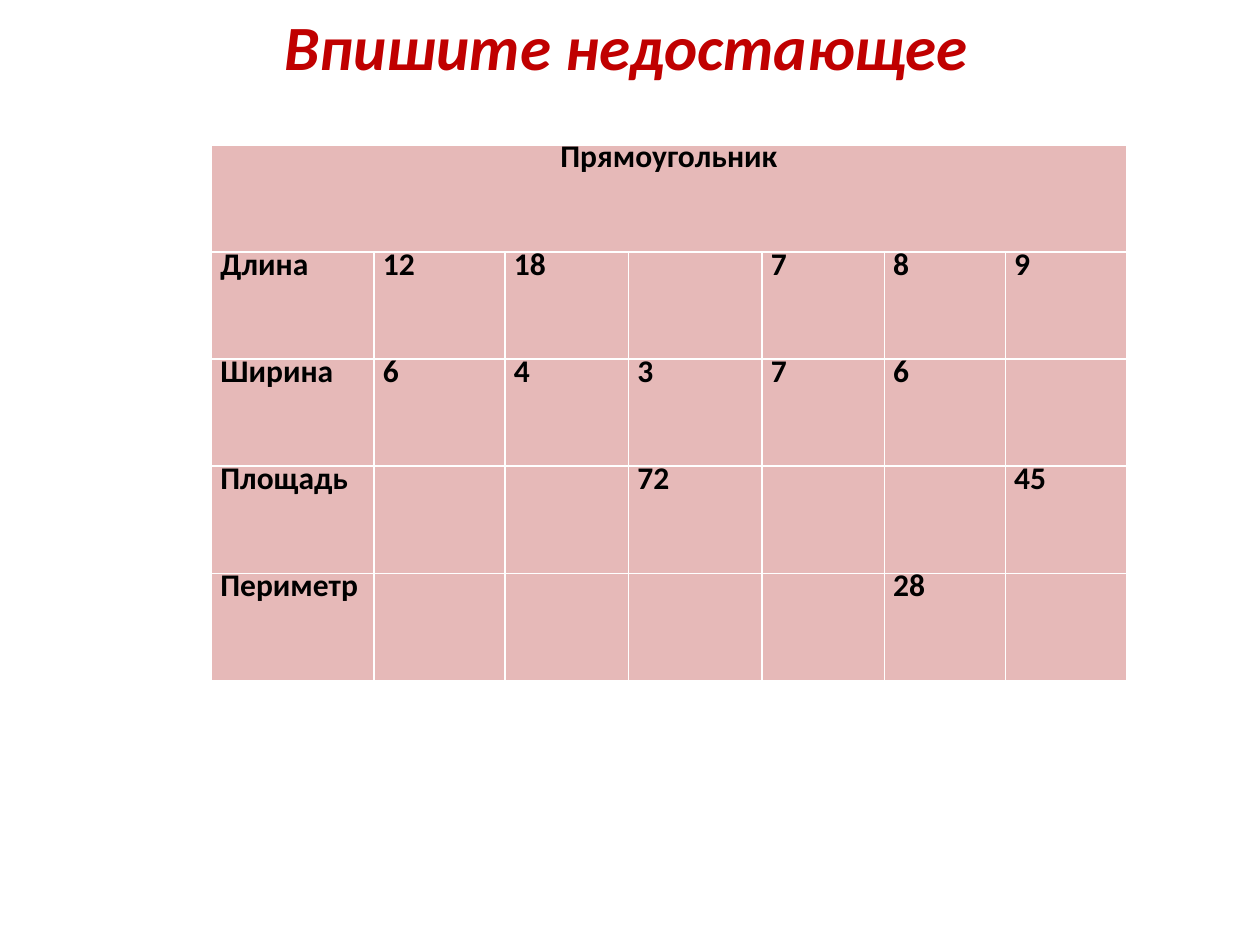
"""Builds a slide with a rectangle worksheet table to fill in."""
from pptx import Presentation
from pptx.dml.color import RGBColor
from pptx.enum.text import MSO_ANCHOR, PP_ALIGN
from pptx.util import Inches, Pt


def style_paragraph(paragraph, size, colour, align):
    paragraph.alignment = align
    for run in paragraph.runs:
        run.font.name = "Calibri"
        run.font.size = Pt(size)
        run.font.bold = True
        run.font.color.rgb = RGBColor.from_string(colour)


deck = Presentation()
deck.slide_width, deck.slide_height = Inches(10), Inches(7.5)
slide = deck.slides.add_slide(deck.slide_layouts[5])

heading = slide.shapes.title
heading.left, heading.top = Inches(0.47), Inches(0)
heading.width, heading.height = Inches(9), Inches(0.72)
heading.text_frame.text = "Впишите недостающее"
heading.text_frame.vertical_anchor = MSO_ANCHOR.MIDDLE
heading_line = heading.text_frame.paragraphs[0]
style_paragraph(heading_line, 36, "C00000", PP_ALIGN.CENTER)
heading_line.runs[0].font.italic = True

measures = [
    ["Прямоугольник", "", "", "", "", "", ""],
    ["Длина", "12", "18", "", "7", "8", "9"],
    ["Ширина", "6", "4", "3", "7", "6", ""],
    ["Площадь", "", "", "72", "", "", "45"],
    ["Периметр", "", "", "", "", "28", ""],
]
column_widths = [1.29, 1.04, 0.98, 1.06, 0.97, 0.96, 0.96]
row_height = 0.85

worksheet = slide.shapes.add_table(
    len(measures), len(column_widths), Inches(1.68), Inches(1.15),
    Inches(sum(column_widths)), Inches(row_height * len(measures))).table
worksheet.horz_banding = False
for column, width in zip(worksheet.columns, column_widths):
    column.width = Inches(width)

for row_index, values in enumerate(measures):
    worksheet.rows[row_index].height = Inches(row_height)
    for column_index, value in enumerate(values):
        cell = worksheet.cell(row_index, column_index)
        cell.fill.solid()
        cell.fill.fore_color.rgb = RGBColor.from_string("E6B9B8")
        cell.margin_left = cell.margin_right = Inches(0.07)
        cell.margin_top = cell.margin_bottom = 0
        cell.text_frame.text = value
        entry = cell.text_frame.paragraphs[0]
        entry.line_spacing = Pt(18)
        style_paragraph(entry, 18, "000000",
                        PP_ALIGN.LEFT if row_index else PP_ALIGN.CENTER)

worksheet.cell(0, 0).merge(worksheet.cell(0, len(column_widths) - 1))

deck.save("out.pptx")
